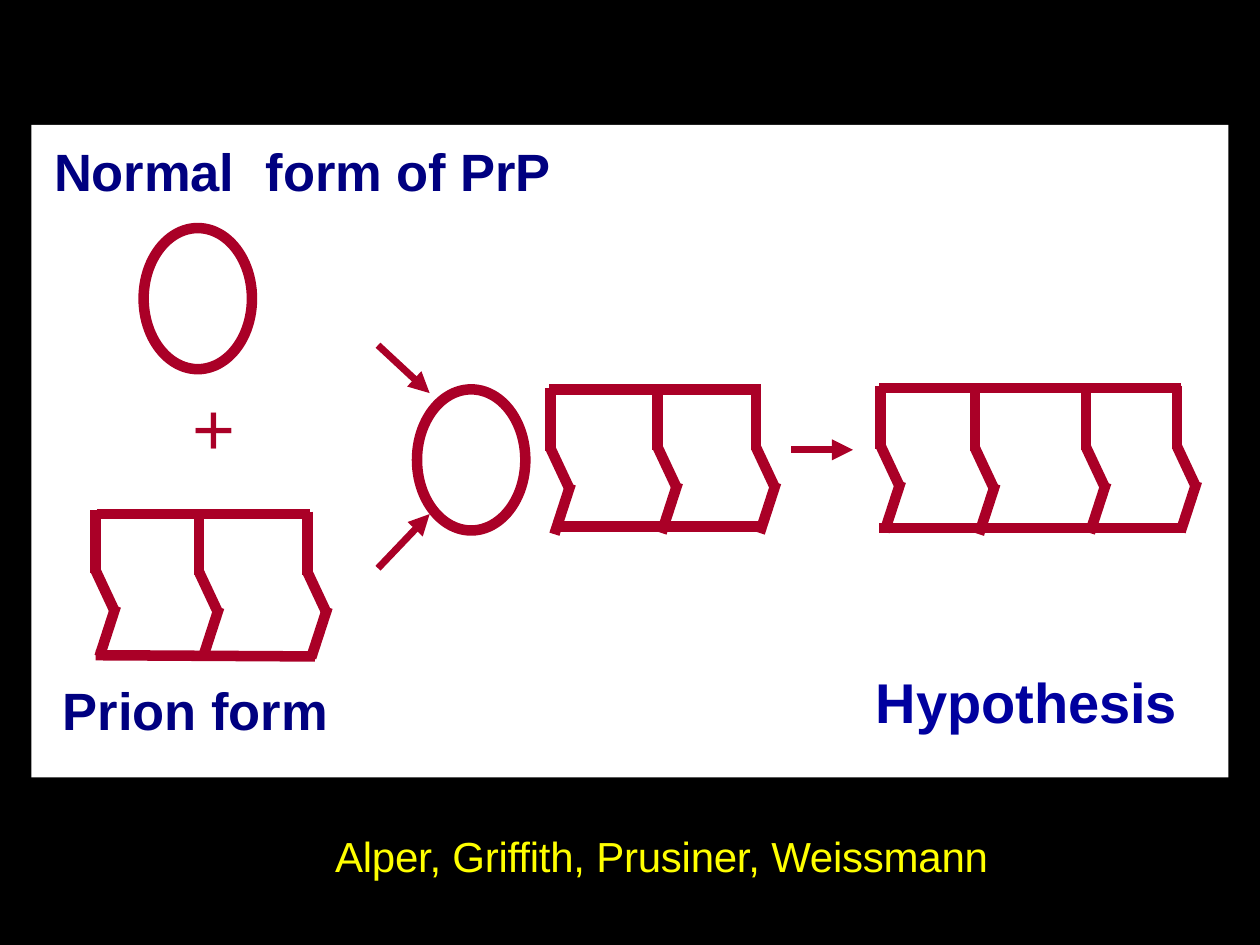
"""Build the slide on the prion hypothesis."""
from dataclasses import dataclass

from lxml import etree
from pptx import Presentation
from pptx import util as u
from pptx.dml.color import RGBColor
from pptx.enum import shapes, text
from pptx.oxml import ns

BLACK = RGBColor(0, 0, 0)
WHITE = RGBColor(255, 255, 255)
RED = RGBColor(0xAA, 0x00, 0x27)
NAVY = RGBColor(0x00, 0x00, 0x80)
BLUE = RGBColor(0x00, 0x00, 0x9F)
YELLOW = RGBColor(255, 255, 0)

Point = tuple[float, float]
Box = tuple[float, float, float, float]


@dataclass
class Label:
    words: str
    box: Box
    size: int
    color: RGBColor
    bold: bool = True
    space: int = -5
    tab: float = 0


@dataclass
class Chain:
    walls: list[Point]
    rails: list[tuple[Point, Point]]


WALL = [((0, 0), (0, 0.5)), ((0, 0.48), (0.15, 0.8)), ((0.16, 0.76), (0.03, 1.16))]
CHAINS = [
    Chain([(0.76, 4.05), (1.58, 4.06), (2.44, 4.06)],
          [((0.77, 4.08), (2.46, 4.08)), ((0.76, 5.2), (2.5, 5.21))]),
    Chain([(4.37, 3.08), (5.22, 3.07), (6, 3.07)],
          [((4.36, 3.09), (6.04, 3.09)), ((4.41, 4.18), (6.06, 4.18))]),
    Chain([(6.99, 3.06), (7.74, 3.08), (8.62, 3.07), (9.34, 3.06)],
          [((6.98, 3.08), (8.66, 3.08)), ((8.62, 3.08), (9.37, 3.08)),
           ((6.98, 4.19), (8.64, 4.19)), ((8.66, 4.19), (9.41, 4.19))]),
]
OVALS = [(1.14, 1.81), (3.31, 3.09)]
ARROWS = [((3, 2.74), (3.41, 3.12)), ((3, 4.51), (3.41, 4.08)),
          ((6.28, 3.57), (6.77, 3.57))]
PLUS = Label("+", (1.52, 3.02, 0.36, 0.73), 42, RED, False, 50)
LABELS = [
    Label("Prion form", (0.49, 5.37, 2.14, 0.53), 30, NAVY, space=0),
    Label("Normal\tform of PrP", (0.42, 1.09, 3.96, 0.53), 30, NAVY, tab=1.68),
    Label("Hypothesis", (6.94, 5.29, 2.42, 0.56), 32, BLUE),
    Label("Alper, Griffith, Prusiner, Weissmann", (2.65, 6.58, 5.28, 0.43),
          24, YELLOW, False, -15),
]


def apply(item, form: dict) -> None:
    for name, value in form.items():
        setattr(item, name, value)


def add_block(slide, box: Box, color: RGBColor) -> None:
    block = slide.shapes.add_shape(
        shapes.MSO_SHAPE.RECTANGLE, *map(u.Inches, box))
    block.shadow.inherit = False
    block.fill.solid()
    block.fill.fore_color.rgb = color
    block.line.fill.background()


def add_oval(slide, spot: Point) -> None:
    oval = slide.shapes.add_shape(
        shapes.MSO_SHAPE.OVAL, *map(u.Inches, (*spot, 0.86, 1.12)))
    oval.shadow.inherit = False
    oval.fill.background()
    oval.line.color.rgb = RED
    oval.line.width = u.Pt(6)


def add_line(slide, start: Point, end: Point, width: float = 6,
             head: bool = False) -> None:
    line = slide.shapes.add_connector(
        shapes.MSO_CONNECTOR.STRAIGHT, *map(u.Inches, (*start, *end)))
    line.line.color.rgb = RED
    line.line.width = u.Pt(width)
    if head:
        etree.SubElement(line.line._get_or_add_ln(), ns.qn("a:tailEnd"), type="triangle")
    etree.SubElement(line._element.spPr, ns.qn("a:effectLst"))


def add_chain(slide, chain: Chain) -> None:
    for start, end in chain.rails:
        add_line(slide, start, end)
    for x, y in chain.walls:
        for (ax, ay), (bx, by) in WALL:
            add_line(slide, (x + ax, y + ay), (x + bx, y + by))


def set_label(shape, label: Label) -> None:
    sides = ("left", "top", "width", "height")
    apply(shape, dict(zip(sides, map(u.Inches, label.box))))
    frame = shape.text_frame
    apply(frame, {
        "margin_left": 0, "margin_right": 0, "margin_bottom": 0,
        "margin_top": u.Inches(0.01), "word_wrap": True,
        "vertical_anchor": text.MSO_ANCHOR.TOP,
        "auto_size": text.MSO_AUTO_SIZE.SHAPE_TO_FIT_TEXT})
    para = frame.paragraphs[0]
    apply(para, {"alignment": text.PP_ALIGN.LEFT, "space_before": u.Pt(1)})
    props = para._p.get_or_add_pPr()
    props.set("marL", str(u.Inches(0.01)))
    if label.tab:
        tabs = etree.SubElement(props, ns.qn("a:tabLst"))
        etree.SubElement(tabs, ns.qn("a:tab"), pos=str(u.Inches(label.tab)), algn="l")
    run = para.add_run()
    run.text = label.words
    apply(run.font, {"name": "Arial", "size": u.Pt(label.size), "bold": label.bold})
    run.font.color.rgb = label.color
    run._r.get_or_add_rPr().set("spc", str(label.space))


def main() -> None:
    deck = Presentation()
    apply(deck, {"slide_width": u.Inches(10), "slide_height": u.Inches(7.5)})
    slide = deck.slides.add_slide(deck.slide_layouts[5])
    add_block(slide, (0, 0, 10, 7.5), BLACK)
    add_block(slide, (0.25, 0.99, 9.5, 5.18), WHITE)
    for spot in OVALS:
        add_oval(slide, spot)
    for chain in CHAINS:
        add_chain(slide, chain)
    for start, end in ARROWS:
        add_line(slide, start, end, 4, True)
    title = slide.shapes.title
    slide.shapes._spTree.append(title._element)
    set_label(title, PLUS)
    for label in LABELS:
        set_label(slide.shapes.add_textbox(0, 0, 0, 0), label)
    deck.save("out.pptx")


if __name__ == "__main__":
    main()
